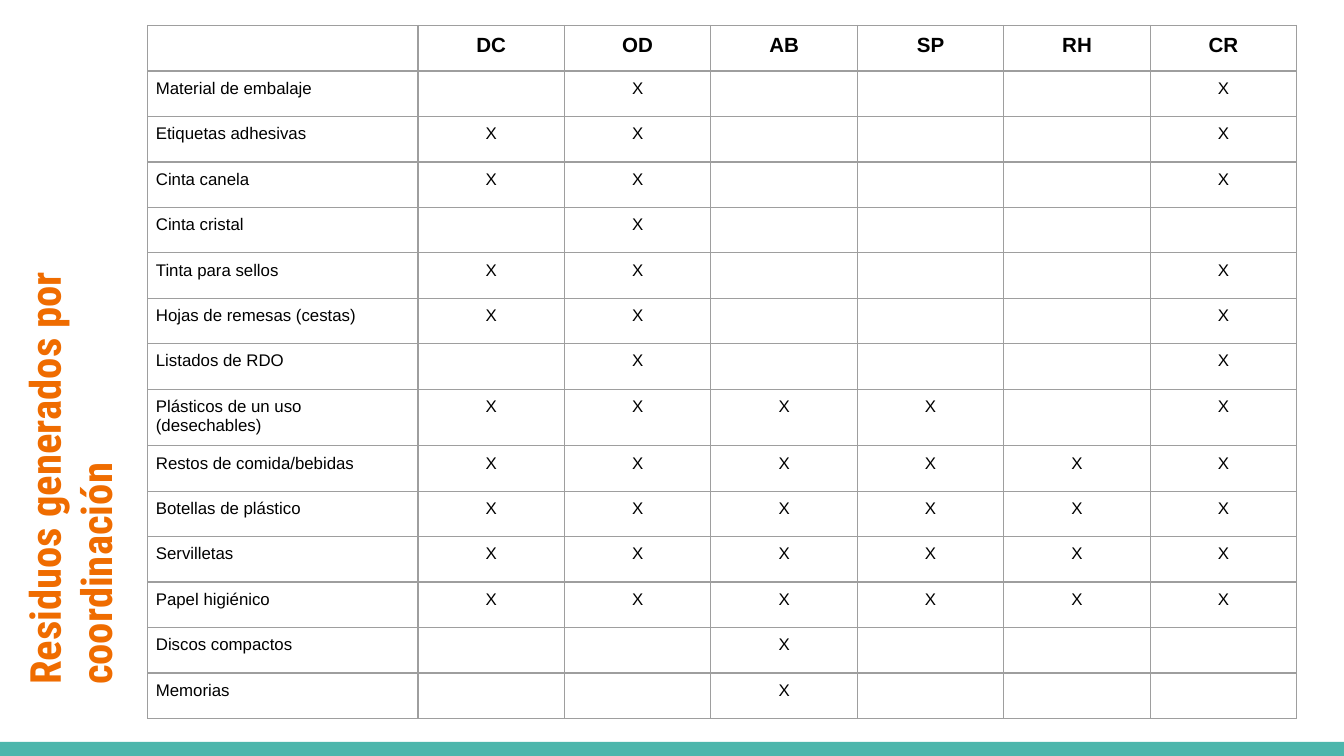
from lxml import etree
from pptx import Presentation
from pptx.dml.color import RGBColor
from pptx.enum.shapes import MSO_SHAPE
from pptx.enum.text import MSO_ANCHOR, PP_ALIGN
from pptx.oxml.ns import qn
from pptx.util import Inches, Pt

RECTANGLE = MSO_SHAPE.RECTANGLE
TOP = MSO_ANCHOR.TOP
LEFT, CENTER = PP_ALIGN.LEFT, PP_ALIGN.CENTER

COLORS = {"band": "4DB6AC", "title": "EF6C00", "text": "000000", "grid": "9E9E9E"}
TITLE_FONT, TABLE_FONT = "Roboto Condensed", "Arial"
HEADER_SIZE, BODY_SIZE = 11, 9

PAGE_WIDTH = 10
PAGE_HEIGHT = PAGE_WIDTH * 9 / 16
TABLE_WIDTH, TABLE_HEIGHT = 8.55, 5.16
LABEL_WIDTH, TALL_ROW, TALL_HEIGHT = 2.01, 8, 0.42

AREAS = ["DC", "OD", "AB", "SP", "RH", "CR"]
WASTE = [
    ("Material de embalaje", ["OD", "CR"]),
    ("Etiquetas adhesivas", ["DC", "OD", "CR"]),
    ("Cinta canela", ["DC", "OD", "CR"]),
    ("Cinta cristal", ["OD"]),
    ("Tinta para sellos", ["DC", "OD", "CR"]),
    ("Hojas de remesas (cestas)", ["DC", "OD", "CR"]),
    ("Listados de RDO", ["OD", "CR"]),
    ("Plásticos de un uso (desechables)", ["DC", "OD", "AB", "SP", "CR"]),
    ("Restos de comida/bebidas", AREAS),
    ("Botellas de plástico", AREAS),
    ("Servilletas", AREAS),
    ("Papel higiénico", AREAS),
    ("Discos compactos", ["AB"]),
    ("Memorias", ["AB"]),
]


def format_text(para, font, size, color, bold):
    """Apply one font to every run of a paragraph."""
    for span in para.runs:
        span.font.name = font
        span.font.size = Pt(size)
        span.font.bold = bold
        span.font.color.rgb = RGBColor.from_string(COLORS[color])


def add_band(page):
    """Draw the coloured band along the foot of the page."""
    band = page.shapes.add_shape(
        RECTANGLE, 0, Inches(5.52), Inches(PAGE_WIDTH), Inches(PAGE_HEIGHT - 5.52)
    )
    band.shadow.inherit = False
    band.fill.solid()
    band.fill.fore_color.rgb = RGBColor.from_string(COLORS["band"])
    band.line.fill.background()


def add_title(page, text):
    """Write the title upwards along the left edge."""
    box = page.shapes.add_textbox(Inches(-2.01), Inches(2.38), Inches(4.86), Inches(0.77))
    box.rotation = 270
    frame = box.text_frame
    frame.word_wrap = True
    frame.vertical_anchor = TOP
    frame.margin_left = frame.margin_right = Inches(0.1)
    frame.margin_top = frame.margin_bottom = Inches(0.1)
    frame.text = text
    format_text(frame.paragraphs[0], TITLE_FONT, 22.9, "title", True)


def set_borders(cell):
    """Give a cell a thin line on all four sides."""
    properties = cell._tc.get_or_add_tcPr()
    for position, side in enumerate(("a:lnL", "a:lnR", "a:lnT", "a:lnB")):
        line = etree.Element(qn(side), w=str(Pt(0.75)))
        fill = etree.SubElement(line, qn("a:solidFill"))
        etree.SubElement(fill, qn("a:srgbClr"), val=COLORS["grid"])
        properties.insert(position, line)


def fill_cell(cell, text, size, bold, align):
    """Write one table cell with its margins, font and borders."""
    cell.margin_left = cell.margin_right = Inches(0.06)
    cell.margin_top = cell.margin_bottom = Inches(0.06)
    cell.vertical_anchor = TOP
    cell.fill.background()
    cell.text_frame.text = text
    para = cell.text_frame.paragraphs[0]
    para.alignment = align
    format_text(para, TABLE_FONT, size, "text", bold)
    if not text:
        etree.SubElement(para._p, qn("a:endParaRPr"), sz=str(size * 100))
    set_borders(cell)


def add_waste_table(page):
    """Build the grid of waste types against areas."""
    rows = [["", *AREAS]]
    for label, sources in WASTE:
        rows.append([label, *("X" if area in sources else "" for area in AREAS)])
    table = page.shapes.add_table(
        len(rows), len(rows[0]), Inches(1.1), Inches(0.19),
        Inches(TABLE_WIDTH), Inches(TABLE_HEIGHT),
    ).table
    table.first_row = table.horz_banding = False
    area_width = (TABLE_WIDTH - LABEL_WIDTH) / len(AREAS)
    row_height = (TABLE_HEIGHT - TALL_HEIGHT) / len(WASTE)
    for index, column in enumerate(table.columns):
        column.width = Inches(area_width if index else LABEL_WIDTH)
    for row_index, texts in enumerate(rows):
        height = TALL_HEIGHT if row_index == TALL_ROW else row_height
        table.rows[row_index].height = Inches(height)
        is_header = row_index == 0
        size = HEADER_SIZE if is_header else BODY_SIZE
        for column_index, text in enumerate(texts):
            align = CENTER if column_index else LEFT
            fill_cell(table.cell(row_index, column_index), text, size, is_header, align)


def main():
    """Create the deck and save it."""
    deck = Presentation()
    deck.slide_width, deck.slide_height = Inches(PAGE_WIDTH), Inches(PAGE_HEIGHT)
    page = deck.slides.add_slide(deck.slide_layouts[6])
    add_band(page)
    add_title(page, "Residuos generados por coordinación")
    add_waste_table(page)
    deck.save("out.pptx")


if __name__ == "__main__":
    main()
